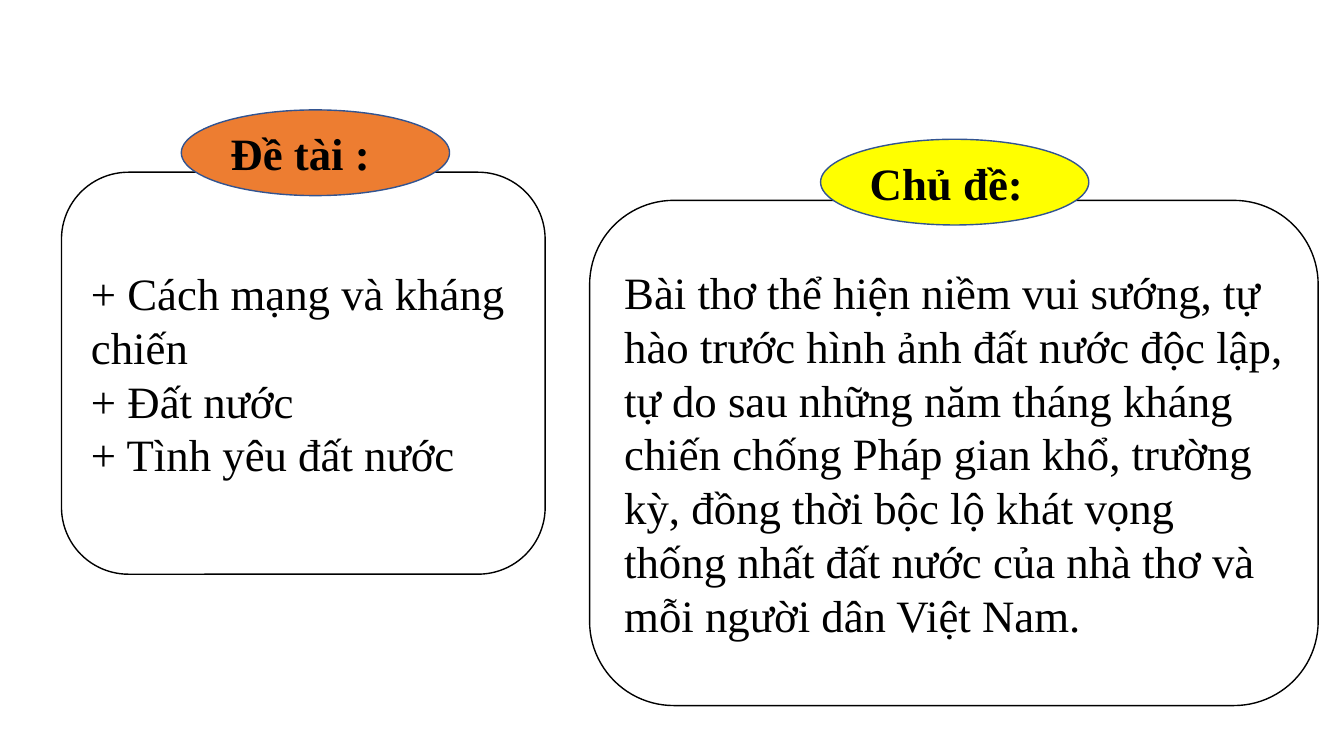
from pptx import Presentation
from pptx.dml.color import RGBColor
from pptx.enum.shapes import MSO_SHAPE
from pptx.enum.text import MSO_ANCHOR, PP_ALIGN
from pptx.util import Cm, Pt


def paint(color, code):
    color.rgb = RGBColor.from_string(code)


class Board:
    """Holds the text style and the current slide."""

    font = "Times New Roman"
    size = Pt(32)
    ink = "000000"
    edge = "325491"

    def __init__(self, slide):
        self.slide = slide

    def shape(self, kind, box, text, fill, line, bold=False):
        item = self.slide.shapes.add_shape(kind, *map(Cm, box))
        item.shadow.inherit = False
        item.fill.solid()
        paint(item.fill.fore_color, fill)
        paint(item.line.color, line)
        item.line.width = Pt(1)
        frame = item.text_frame
        frame.text = text
        frame.word_wrap = True
        frame.vertical_anchor = MSO_ANCHOR.MIDDLE
        for para in frame.paragraphs:
            para.alignment = PP_ALIGN.LEFT
            for run in para.runs:
                run.font.name = self.font
                run.font.size = self.size
                run.font.bold = bold
                paint(run.font.color, self.ink)

    def card(self, box, text):
        self.shape(MSO_SHAPE.ROUNDED_RECTANGLE, box, text, "FFFFFF", self.ink)

    def label(self, left, top, text, fill):
        box = (left, top, 6.76, 2.16)
        self.shape(MSO_SHAPE.OVAL, box, text, fill, self.edge, True)


def main():
    deck = Presentation()
    deck.slide_width, deck.slide_height = Cm(33.87), Cm(19.05)
    board = Board(deck.slides.add_slide(deck.slide_layouts[6]))

    topics = ["+ Cách mạng và kháng chiến", "+ Đất nước", "+ Tình yêu đất nước"]
    theme = (
        "Bài thơ thể hiện niềm vui sướng, tự hào trước hình ảnh đất nước "
        "độc lập, tự do sau những năm tháng kháng chiến chống Pháp gian khổ, "
        "trường kỳ, đồng thời bộc lộ khát vọng thống nhất đất nước của nhà "
        "thơ và mỗi người dân Việt Nam."
    )
    board.card((1.55, 4.34, 12.19, 10.13), "\n".join(topics))
    board.card((14.86, 5.05, 18.36, 12.73), theme)
    board.label(4.57, 2.77, "Đề tài :", "ED7D31")
    board.label(20.68, 3.51, "Chủ đề:", "FFFF00")
    deck.save("out.pptx")


if __name__ == "__main__":
    main()
